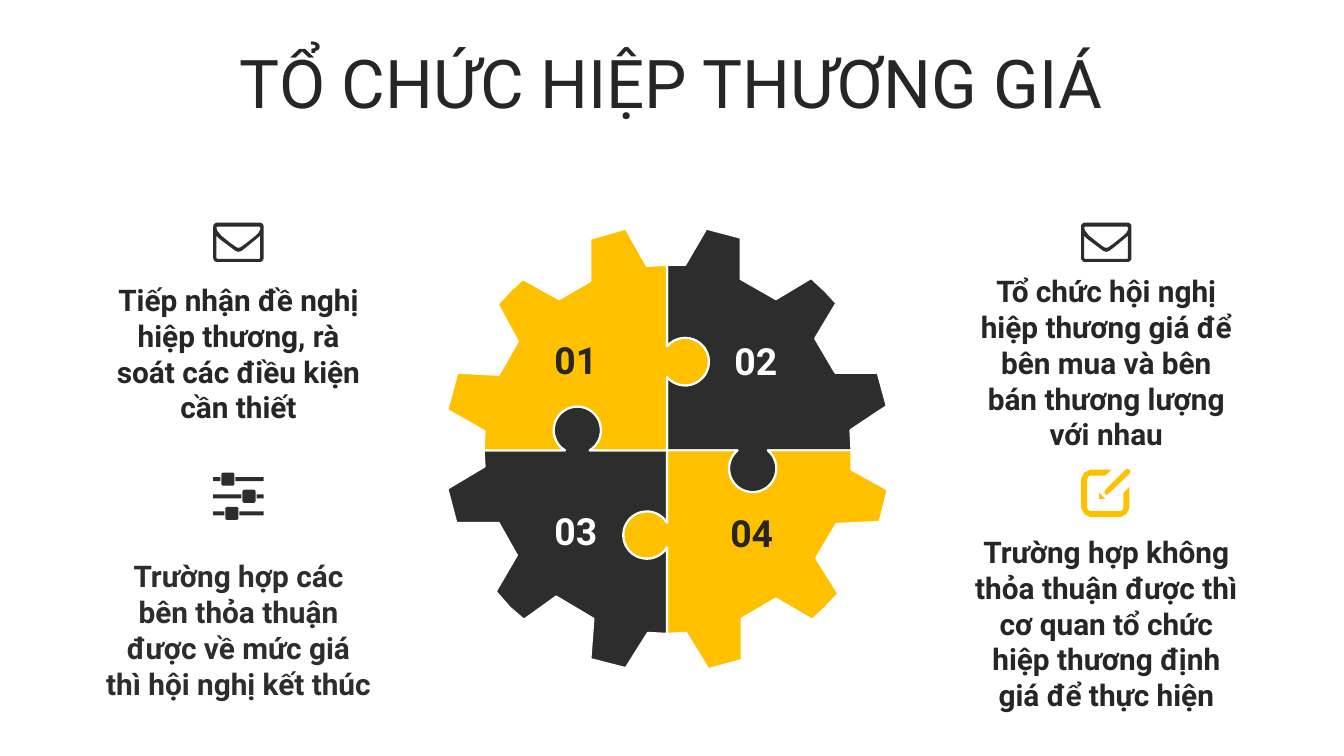
from math import acos, cos, radians, sin, degrees
from pptx import Presentation
from pptx.dml.color import RGBColor
from pptx.enum.text import MSO_ANCHOR, PP_ALIGN
from pptx.util import Cm, Pt

DARK = RGBColor(0x2D, 0x2D, 0x2D)
INK = RGBColor(0x26, 0x26, 0x26)
GOLD = RGBColor(0xFF, 0xC0, 0x00)
WHITE = RGBColor(0xFF, 0xFF, 0xFF)
FONT = "Roboto"
UNIT = 0.0254  # cm per drawing unit
FINE = 10  # steps per drawing unit
CARD_W, CARD_H, ICON_W = 7.34, 2.97, 1.27

# Teeth of each quarter, clockwise from the top, measured from the gear's hub
RIMS = [
    [(0, -184), (18, -184), (39, -220), (73, -211), (73, -170), (108, -150),
     (143, -171), (157, -158), (168, -146), (147, -111), (167, -77),
     (209, -77), (218, -44), (182, -20), (183, 0)],
    [(183, 0), (183, 19), (219, 39), (211, 71), (168, 73), (148, 107),
     (170, 142), (157, 156), (144, 168), (108, 147), (74, 167),
     (74, 208), (41, 217), (19, 181), (0, 182)],
    [(0, 182), (-19, 181), (-41, 216), (-76, 207), (-73, 167), (-110, 145),
     (-142, 168), (-156, 156), (-170, 140), (-149, 104), (-167, 72),
     (-209, 72), (-218, 38), (-181, 16), (-182, 0)],
    [(-182, 0), (-181, -19), (-218, -40), (-208, -77), (-167, -75),
     (-148, -108), (-168, -145), (-156, -158), (-143, -170), (-107, -150),
     (-76, -168), (-76, -210), (-41, -220), (-20, -183), (0, -184)],
]
# Distance from the hub and depth of the knob on each seam
KNOBS = [(88, 18), (85, 18), (84, 20), (89, 20)]
KNOB_R = 23.5
# Number, fill, ink, then left, top and bottom inset of each quarter
PARTS = [
    ("02", DARK, WHITE, 1.7, 0, 0),
    ("04", GOLD, INK, 2.7, 0, 1.35),
    ("03", DARK, WHITE, 2.7, 0, 0.33),
    ("01", GOLD, INK, 2.7, 1.02, 0),
]


def arc(x, y, r, start, end, steps):
    turns = [radians(start + (end - start) * i / steps)
             for i in range(steps + 1)]
    return [(x + r * cos(t), y + r * sin(t)) for t in turns]


def block(x, y, w, h, r):
    """Outline of a rectangle with rounded corners."""
    return (arc(x + r, y + r, r, 180, 270, 6)
            + arc(x + w - r, y + r, r, 270, 360, 6)
            + arc(x + w - r, y + h - r, r, 0, 90, 6)
            + arc(x + r, y + h - r, r, 90, 180, 6))


def draw(slide, left, top, loops, fill):
    """Fill closed loops whose zero point lies at left, top."""
    loops = [[(x * FINE, y * FINE) for x, y in loop] for loop in loops]
    pen = slide.shapes.build_freeform(*loops[0][0], scale=Cm(UNIT) / FINE)
    pen.add_line_segments(loops[0][1:])
    for loop in loops[1:]:
        pen.move_to(*loop[0])
        pen.add_line_segments(loop[1:])
    shape = pen.convert_to_shape(Cm(left), Cm(top))
    shape.shadow.inherit = False
    shape.fill.solid()
    shape.fill.fore_color.rgb = fill
    shape.line.fill.background()
    return shape


def write(frame, text, size, color, align, bold=True):
    frame.word_wrap = True
    frame.vertical_anchor = MSO_ANCHOR.MIDDLE
    para = frame.paragraphs[0]
    para.alignment = align
    run = para.add_run()
    run.text = text
    font = run.font
    font.name, font.size, font.bold = FONT, Pt(size), bold
    font.color.rgb = color
    return para


def inset(frame, left, top, right, low):
    frame.margin_left, frame.margin_top = Cm(left), Cm(top)
    frame.margin_right, frame.margin_bottom = Cm(right), Cm(low)


def title(slide, left, top, width, height, text):
    box = slide.shapes.add_textbox(Cm(left), Cm(top), Cm(width), Cm(height))
    inset(box.text_frame, 0, 0, 0, 0)
    para = write(box.text_frame, text, 48, INK, PP_ALIGN.CENTER, False)
    para.line_spacing = 0.9


def mail():
    flap = [(4, 4), (46, 4), (47, 6), (45, 10), (42, 13), (32, 21), (27, 24.5),
            (25, 25), (23, 24.5), (18, 21), (8, 13), (4, 8), (3, 5)]
    body = [(3, 13), (6, 16), (18, 25), (22, 28), (25, 29), (28, 28),
            (32, 25), (43, 16), (46.5, 13), (46.5, 35), (46, 36),
            (4, 36), (3, 35)]
    return [block(0, 0, 50, 39, 4), flap, body]


def sliders():
    loops = []
    for y, x in ((6.5, 8), (23.5, 29), (40.5, 12)):
        loops += [block(0, y - 2, x - 1, 4, 0), block(x, y - 6.5, 13, 13, 2),
                  block(x + 14, y - 2, 36 - x, 4, 0)]
    return loops


def edit():
    sheet = [(39, 48), (9, 48), (3, 45), (0, 39), (0, 10), (3, 4), (9, 1),
             (30, 1), (24, 7), (9, 7), (7, 8), (6, 10), (6, 39), (7, 41),
             (9, 42), (39, 42), (41, 41), (42, 39), (42, 24), (48, 18),
             (48, 39), (45, 45)]
    pen = [(48, 5), (27, 25), (25.5, 26), (24, 25), (23, 23.5), (24, 21),
           (44, 1), (46, 0), (48, 1), (49, 3)]
    return [sheet, pen, [(18, 30), (18, 24), (24, 30)]]


def card(slide, left, top, drop, icon, fill, ink, text):
    """Icon at the top, with its text centred below after the drop."""
    draw(slide, left + (CARD_W - ICON_W) / 2, top, icon(), fill)
    box = slide.shapes.add_textbox(Cm(left), Cm(top + drop),
                                   Cm(CARD_W), Cm(CARD_H))
    inset(box.text_frame, 0.33, 0.13, 0.33, 0.13)
    para = write(box.text_frame, text, 21.3, ink, PP_ALIGN.CENTER)
    para.space_before = Pt(4)


def seam(turn):
    """Path from the hub to the rim, its knob bulging clockwise."""
    turn %= 4
    far, deep = KNOBS[turn]
    half = 180 - degrees(acos(deep / KNOB_R))
    path = [(0, 0)] + arc(deep, -far, KNOB_R, half, -half, 40)
    for _ in range(turn):
        path = [(-y, x) for x, y in path]
    return path


def gear(slide, left, top, size):
    for turn, (text, fill, ink, west, north, south) in enumerate(PARTS):
        loop = seam(turn) + RIMS[turn] + seam(turn + 1)[:0:-1]
        part = draw(slide, left + size / 2, top + size / 2, [loop], fill)
        part.line.color.rgb = WHITE
        part.line.width = Pt(1.5)
        inset(part.text_frame, west, north, 0, south)
        write(part.text_frame, text, 26.7, ink, PP_ALIGN.LEFT)


def main():
    deck = Presentation()
    deck.slide_width, deck.slide_height = Cm(33.87), Cm(19.05)
    slide = deck.slides.add_slide(deck.slide_layouts[6])
    title(slide, 1.42, 1.27, 31, 1.83, "TỔ CHỨC HIỆP THƯƠNG GIÁ")
    west, east = 2.34, 24.21
    card(slide, west, 5.61, 1.81, mail, DARK, INK,
         "Tiếp nhận đề nghị hiệp thương, rà soát các điều kiện cần thiết")
    card(slide, west, 11.91, 2.47, sliders, DARK, DARK,
         "Trường hợp các bên thỏa thuận được về mức giá "
         "thì hội nghị kết thúc")
    card(slide, east, 5.61, 2.04, mail, DARK, INK,
         "Tổ chức hội nghị hiệp thương giá để bên mua và bên bán "
         "thương lượng với nhau")
    card(slide, east, 11.81, 2.41, edit, GOLD, INK,
         "Trường hợp không thỏa thuận được thì cơ quan tổ chức "
         "hiệp thương định giá để thực hiện")
    gear(slide, 11.26, 5.8, 11.1)
    deck.save("out.pptx")


if __name__ == "__main__":
    main()
